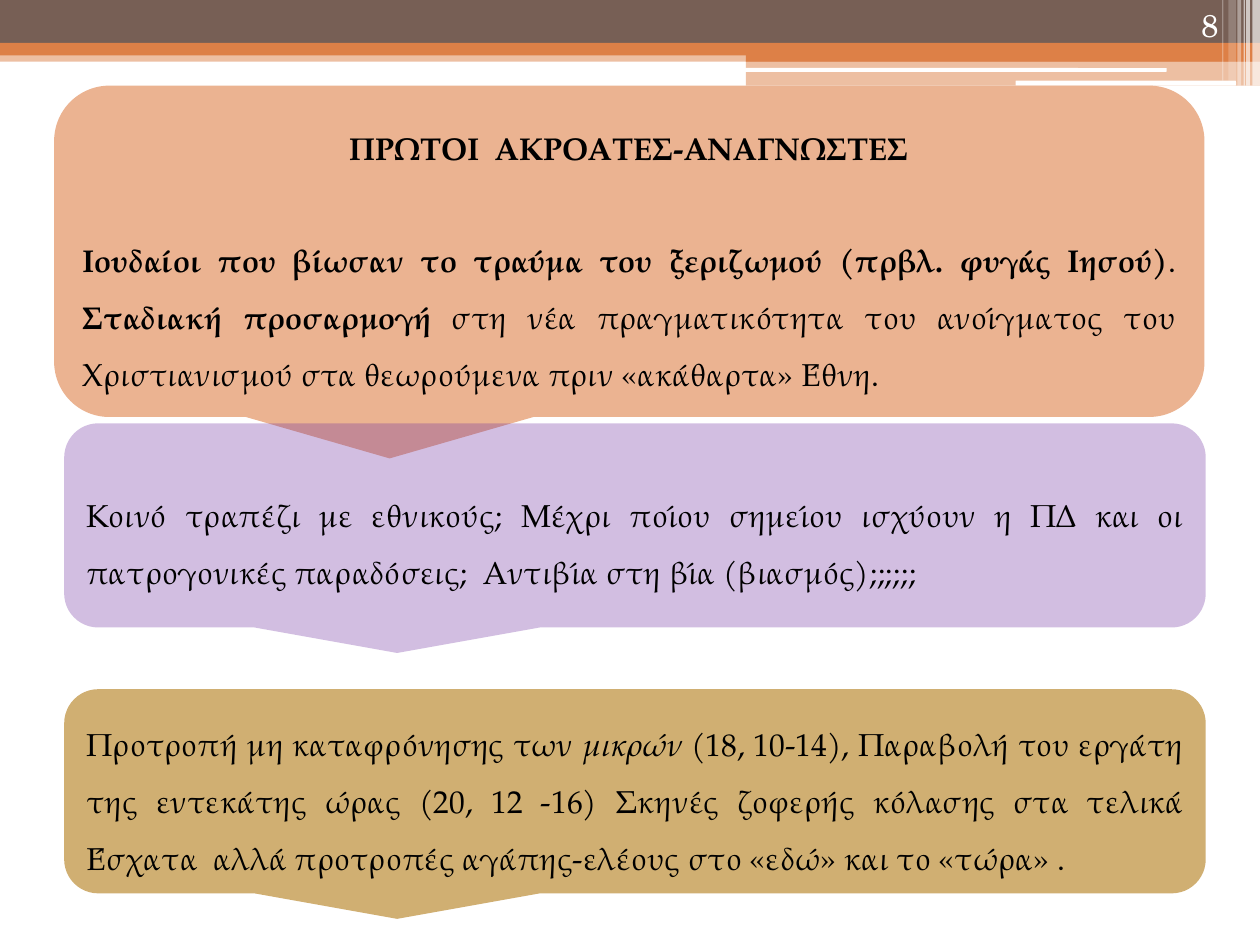
"""Build the slide on the first listeners and readers, with three callouts."""
from lxml import etree
from pptx import Presentation
from pptx import util as u
from pptx.dml.color import RGBColor
from pptx.enum import shapes, text
from pptx.oxml import ns

COLORS = {"brown": "775F55", "orange": "DD8047", "white": "FFFFFF", "black": "000000",
          "peach": "EBB391", "sand": "D0AF72", "purple": "7030A0"}
BODY_FONT, NUMBER_FONT = "TeX Gyre Pagella", "TeX Gyre Schola"
RECTANGLE = shapes.MSO_SHAPE.RECTANGLE
ROUNDED = shapes.MSO_SHAPE.ROUNDED_RECTANGLE
CALLOUT = shapes.MSO_SHAPE.ROUNDED_RECTANGULAR_CALLOUT
CENTER, JUSTIFY = text.PP_ALIGN.CENTER, text.PP_ALIGN.JUSTIFY

HEADER = [
    (RECTANGLE, (0, 0.4, 10, 0.09), "orange", 50),
    (RECTANGLE, (0, 0, 10, 0.34), "brown", 100),
    (RECTANGLE, (0, 0.34, 10, 0.1), "orange", 100),
    (RECTANGLE, (5.92, 0.39, 4.08, 0.1), "orange", 100),
    (RECTANGLE, (5.92, 0.48, 4.08, 0.2), "orange", 50),
    (ROUNDED, (5.91, 0.54, 3.35, 0.03), "white", 100),
    (ROUNDED, (8.06, 0.64, 1.75, 0.04), "white", 100),
]
STRIPES = [(9.94, 0.06, 0.68, 65), (9.89, 0.03, 0.68, 65), (9.87, 0.01, 0.68, 60),
           (9.82, 0.03, 0.68, 40), (9.75, 0.06, 0.64, 20), (9.7, 0.01, 0.64, 30)]

CALLOUTS = [
    {"box": (0.43, 0.68, 9.13, 2.63), "color": "peach", "opacity": 100, "top": 0.05,
     "paragraphs": [
         (CENTER, 0, [("ΠΡΩΤΟΙ  ΑΚΡΟΑΤΕΣ-ΑΝΑΓΝΩΣΤΕΣ", "bold")]),
         (JUSTIFY, 32, [
             ("Ιουδαίοι που βίωσαν το τραύμα του ξεριζωμού (πρβλ. φυγάς Ιησού)", "bold"),
             (". ", ""),
             ("Σταδιακή προσαρμογή ", "bold"),
             ("στη νέα πραγματικότητα του ανοίγματος του Χριστιανισμού "
              "στα θεωρούμενα πριν «ακάθαρτα» Έθνη.", "")])]},
    {"box": (0.51, 5.47, 9.06, 1.62), "color": "sand", "opacity": 100, "top": 0.05,
     "paragraphs": [
         (JUSTIFY, 0, [
             ("Προτροπή μη καταφρόνησης των ", ""),
             ("μικρών", "italic"),
             (" (18, 10-14), Παραβολή του εργάτη της εντεκάτης ώρας (20, 12 -16) "
              "Σκηνές ζοφερής κόλασης στα τελικά Έσχατα  αλλά προτροπές "
              "αγάπης-ελέους στο «εδώ» και το «τώρα» .", "")])]},
    {"box": (0.51, 3.36, 9.06, 1.62), "color": "purple", "opacity": 31, "top": 0.19,
     "paragraphs": [
         (JUSTIFY, 0, [
             ("Κοινό τραπέζι με εθνικούς; Μέχρι ποίου σημείου ισχύουν η ΠΔ και οι "
              "πατρογονικές παραδόσεις;  Αντιβία στη βία (βιασμός);;;;;;", "")])]},
]


def rgb(name):
    return RGBColor.from_string(COLORS[name])


def add_filled(slide, kind, box, color, opacity):
    shape = slide.shapes.add_shape(kind, *map(u.Inches, box))
    shape.shadow.inherit = False
    shape.line.fill.background()
    shape.fill.solid()
    shape.fill.fore_color.rgb = rgb(color)
    if opacity < 100:
        color_element = shape.fill._xPr.find(".//" + ns.qn("a:srgbClr"))
        etree.SubElement(color_element, ns.qn("a:alpha"), val=str(opacity * 1000))
    return shape


def set_font(paragraph, name, color):
    paragraph.font.name = name
    paragraph.font.size = u.Pt(18)
    paragraph.font.color.rgb = rgb(color)


def add_callout(slide, callout):
    shape = add_filled(slide, CALLOUT, callout["box"], callout["color"], callout["opacity"])
    frame = shape.text_frame
    frame.word_wrap = True
    frame.vertical_anchor = text.MSO_ANCHOR.MIDDLE
    frame.margin_top = u.Inches(callout["top"])
    for index, (alignment, gap, runs) in enumerate(callout["paragraphs"]):
        paragraph = frame.add_paragraph() if index else frame.paragraphs[0]
        paragraph.alignment = alignment
        paragraph.line_spacing = 1.5
        paragraph.space_before = u.Pt(gap)
        set_font(paragraph, BODY_FONT, "black")
        for words, style in runs:
            run = paragraph.add_run()
            run.text = words
            run.font.bold = style == "bold"
            run.font.italic = style == "italic"


def add_page_number(slide):
    frame = slide.shapes.add_textbox(*map(u.Inches, (8.94, 0, 0.83, 0.4))).text_frame
    frame.word_wrap = True
    frame.vertical_anchor = text.MSO_ANCHOR.BOTTOM
    paragraph = frame.paragraphs[0]
    paragraph.text = "8"
    paragraph.alignment = text.PP_ALIGN.RIGHT
    set_font(paragraph, NUMBER_FONT, "white")


def main():
    presentation = Presentation()
    presentation.slide_width, presentation.slide_height = u.Inches(10), u.Inches(7.5)
    slide = presentation.slides.add_slide(presentation.slide_layouts[6])
    for bar in HEADER:
        add_filled(slide, *bar)
    for left, width, height, opacity in STRIPES:
        add_filled(slide, RECTANGLE, (left, 0, width, height), "white", opacity)
    add_page_number(slide)
    for callout in CALLOUTS:
        add_callout(slide, callout)
    presentation.save("out.pptx")


if __name__ == "__main__":
    main()
